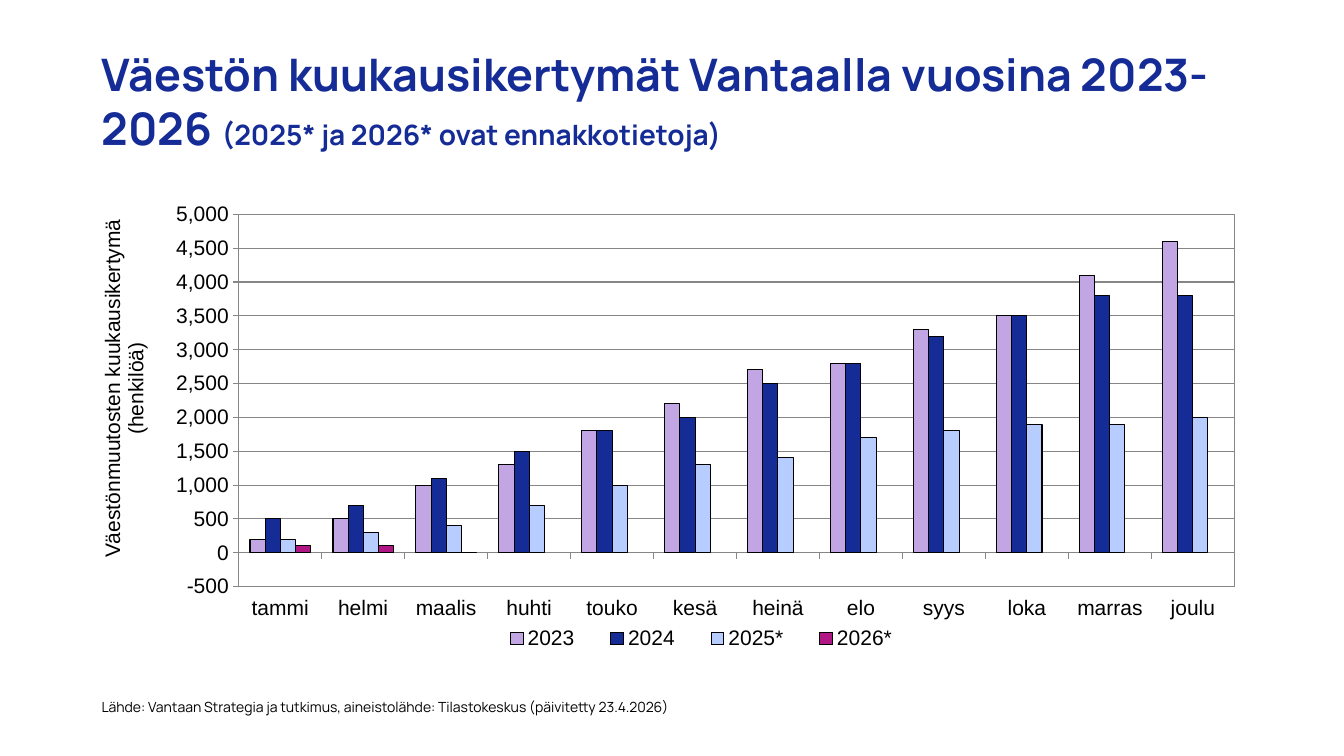
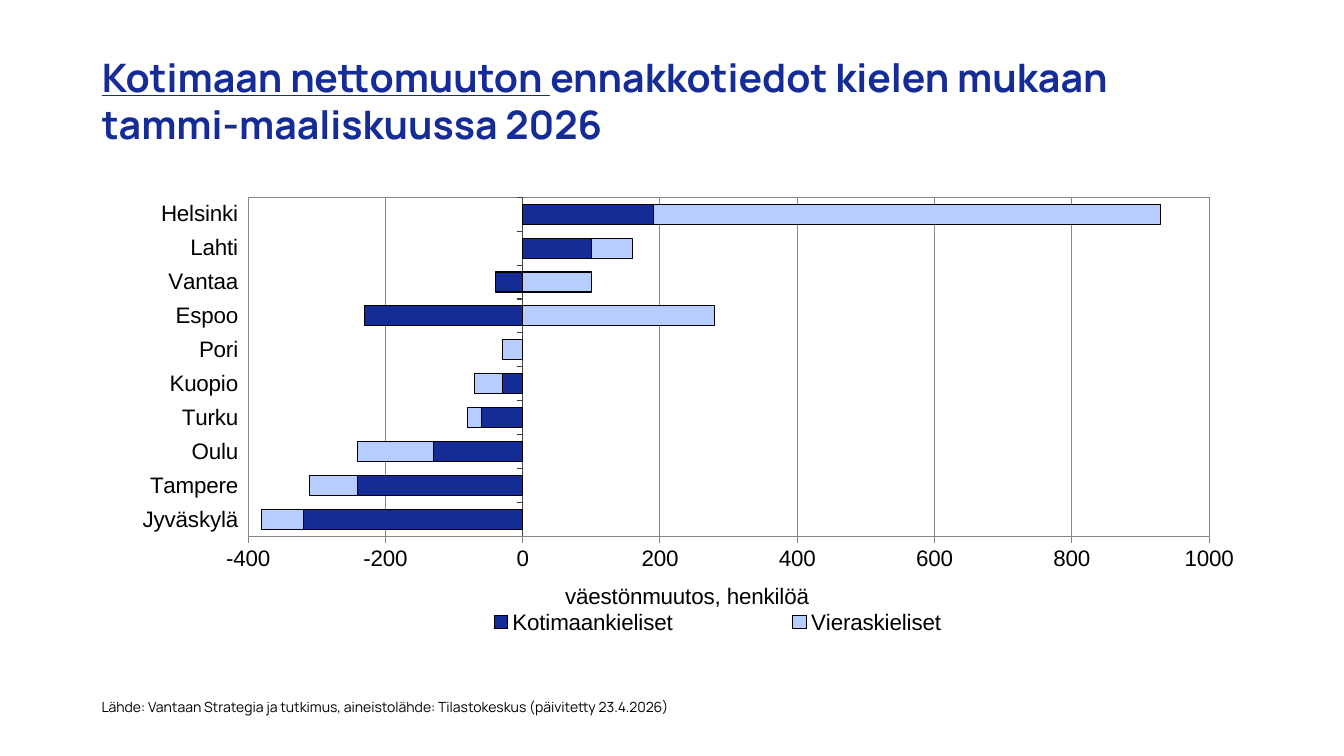
from lxml import etree
from pptx import Presentation
from pptx.chart.data import CategoryChartData
from pptx.dml.color import RGBColor
from pptx.enum.chart import (XL_CHART_TYPE as CHART, XL_LEGEND_POSITION as LEGEND,
                             XL_TICK_LABEL_POSITION as LABELS, XL_TICK_MARK as TICK)
from pptx.enum.text import MSO_ANCHOR as ANCHOR, MSO_AUTO_SIZE as AUTO, PP_ALIGN as ALIGN
from pptx.oxml import parse_xml
from pptx.oxml.ns import nsdecls, qn
from pptx.util import Pt

NAVY = RGBColor(0x15, 0x2B, 0x96)
LILAC = RGBColor(0xC2, 0xA6, 0xE3)
SKY = RGBColor(0xB8, 0xCD, 0xFF)
MAGENTA = RGBColor(0xB0, 0x17, 0x85)
BLACK = RGBColor(0, 0, 0)
GRAY = RGBColor(0x86, 0x86, 0x86)
DARK_GRAY = RGBColor(0x40, 0x40, 0x40)
TITLE_FONT, CHART_FONT = "Manrope", "Arial"
LINE = Pt(0.75)

LEFT = 65.5
TITLE_BOX = (LEFT, 27.4, 808, 88.6)
SOURCE_BOX = (LEFT, 495.4, 690, 21.6)
CHART_SIZE = (828, 328.3)
SOURCE = ("Lähde: Vantaan Strategia ja tutkimus, aineistolähde: Tilastokeskus "
          "(päivitetty 23.4.2026)")

# Layouts are percentages of the chart: x, y and, where sized, width and height.
SLIDES = [
    dict(
        title=[("Väestön kuukausikertymät Vantaalla vuosina 2023-2026 ", dict(size=32)),
               ("(2025* ja 2026* ovat ennakkotietoja)", dict(size=20))],
        kind=CHART.COLUMN_CLUSTERED, at=(66.2, 142.6), size=15, gap=150, overlap=0,
        cats=["tammi", "helmi", "maalis", "huhti", "touko", "kesä",
              "heinä", "elo", "syys", "loka", "marras", "joulu"],
        series=[
            ("2023", LILAC, [200, 500, 1000, 1300, 1800, 2200,
                             2700, 2800, 3300, 3500, 4100, 4600]),
            ("2024", NAVY, [500, 700, 1100, 1500, 1800, 2000,
                            2500, 2800, 3200, 3500, 3800, 3800]),
            ("2025*", SKY, [200, 300, 400, 700, 1000, 1300,
                            1400, 1700, 1800, 1900, 1900, 2000]),
            ("2026*", MAGENTA, [100, 100, 0] + [None] * 9),
        ],
        scale=(-500, 5000, 500), number_format="#,##0", cat_line=GRAY,
        axis_title="Väestönmuutosten kuukausikertymä (henkilöä)", rotation=-5400000,
        plot_layout=(12.6, 3.2, 85.9, 81), title_layout=(0.2, 3.5),
        legend_layout=(33.5, 92, 38, 7),
    ),
    dict(
        title=[("Kotimaan nettomuuton ", dict(size=28, underline=True)),
               ("ennakkotiedot kielen mukaan tammi-maaliskuussa 2026", dict(size=28))],
        kind=CHART.BAR_STACKED, at=(LEFT, 131), size=16, gap=70, overlap=100,
        cats=["Jyväskylä", "Tampere", "Oulu", "Turku", "Kuopio",
              "Pori", "Espoo", "Vantaa", "Lahti", "Helsinki"],
        series=[
            ("Kotimaankieliset", NAVY, [-320, -240, -130, -60, -30, 0, -230, -40, 100, 190]),
            ("Vieraskieliset", SKY, [-60, -70, -110, -20, -40, -30, 280, 100, 60, 740]),
        ],
        scale=(-400, 1000, 200), number_format="0", cat_line=DARK_GRAY,
        axis_title="väestönmuutos, henkilöä", rotation=0,
        plot_layout=(13.5, 3, 82.9, 73.9), title_layout=(40.5, 85.8),
        legend_layout=(25, 92, 58, 7),
    ),
]


def add_text(p, text, *, size, font=TITLE_FONT, color=BLACK, bold=False, underline=False):
    r = p.add_run()
    r.text = text
    f = r.font
    f.name, f.size, f.bold, f.underline = font, Pt(size), bold, underline
    f.color.rgb = color


def set_line(line, color):
    line.color.rgb = color
    line.width = LINE


def place(element, layout, index, inner=False):
    """Give a chart part a manual layout, stored as its child number index."""
    old = element.find(qn("c:layout"))
    if old is not None:
        element.remove(old)
    new = parse_xml(f"<c:layout {nsdecls('c')}><c:manualLayout/></c:layout>")
    settings = [("layoutTarget", "inner")] if inner else []
    settings += [("xMode", "edge"), ("yMode", "edge")]
    settings += [(tag, percent / 100) for tag, percent in zip("xywh", layout)]
    for tag, value in settings:
        etree.SubElement(new[0], qn(f"c:{tag}")).set("val", str(value))
    element.insert(index, new)


def add_title(s, parts):
    title = s.shapes.title
    title.left, title.top, title.width, title.height = map(Pt, TITLE_BOX)
    tf = title.text_frame
    tf.word_wrap, tf.auto_size, tf.vertical_anchor = True, AUTO.NONE, ANCHOR.MIDDLE
    p = tf.paragraphs[0]
    p.alignment, p.line_spacing = ALIGN.LEFT, 1.0
    for text, style in parts:
        add_text(p, text, color=NAVY, bold=True, **style)


def add_source(s):
    tf = s.shapes.add_textbox(*map(Pt, SOURCE_BOX)).text_frame
    tf.word_wrap = True
    add_text(tf.paragraphs[0], SOURCE, size=10)


def format_axes(chart, d):
    cat, val = chart.category_axis, chart.value_axis
    for axis, color in ((cat, d["cat_line"]), (val, GRAY)):
        axis.major_tick_mark, axis.minor_tick_mark = TICK.OUTSIDE, TICK.NONE
        set_line(axis.format.line, color)
    cat.tick_label_position = LABELS.LOW
    cat.has_major_gridlines = False
    val.minimum_scale, val.maximum_scale, val.major_unit = d["scale"]
    val.has_major_gridlines = True
    set_line(val.major_gridlines.format.line, GRAY)
    val.tick_labels.number_format = d["number_format"]
    val.tick_labels.number_format_is_linked = False

    title = val.axis_title
    tf = title.text_frame
    add_text(tf.paragraphs[0], d["axis_title"], size=d["size"], font=CHART_FONT)
    body = title.element.find(".//" + qn("a:bodyPr"))
    body.set("rot", str(d["rotation"]))
    body.set("vert", "horz")
    place(title.element, d["title_layout"], 1)


def add_bar_chart(s, d):
    data = CategoryChartData()
    data.categories = d["cats"]
    for name, _, values in d["series"]:
        data.add_series(name, values)
    chart = s.shapes.add_chart(d["kind"], *map(Pt, d["at"] + CHART_SIZE), data).chart
    chart.has_title = False
    f = chart.font
    f.name, f.size, f.color.rgb = CHART_FONT, Pt(d["size"]), BLACK

    plot = chart.plots[0]
    plot.gap_width, plot.overlap, plot.vary_by_categories = d["gap"], d["overlap"], False
    for series, (_, color, _) in zip(plot.series, d["series"]):
        series.invert_if_negative = False
        series.format.fill.solid()
        series.format.fill.fore_color.rgb = color
        set_line(series.format.line, BLACK)
    format_axes(chart, d)

    chart.has_legend = True
    chart.legend.position = LEGEND.BOTTOM
    chart.legend.include_in_layout = False
    place(chart.element.find(".//" + qn("c:legend")), d["legend_layout"], 1)
    area = chart.element.find(".//" + qn("c:plotArea"))
    place(area, d["plot_layout"], 0, inner=True)
    area.append(parse_xml(
        f'<c:spPr {nsdecls("c", "a")}><a:noFill/><a:ln w="{LINE}"><a:solidFill>'
        f'<a:srgbClr val="{GRAY}"/></a:solidFill></a:ln></c:spPr>'))


def main():
    prs = Presentation()
    prs.slide_width, prs.slide_height = Pt(960), Pt(540)
    for d in SLIDES:
        s = prs.slides.add_slide(prs.slide_layouts.get_by_name("Title Only"))
        add_title(s, d["title"])
        add_source(s)
        add_bar_chart(s, d)
    prs.save("out.pptx")


if __name__ == "__main__":
    main()
